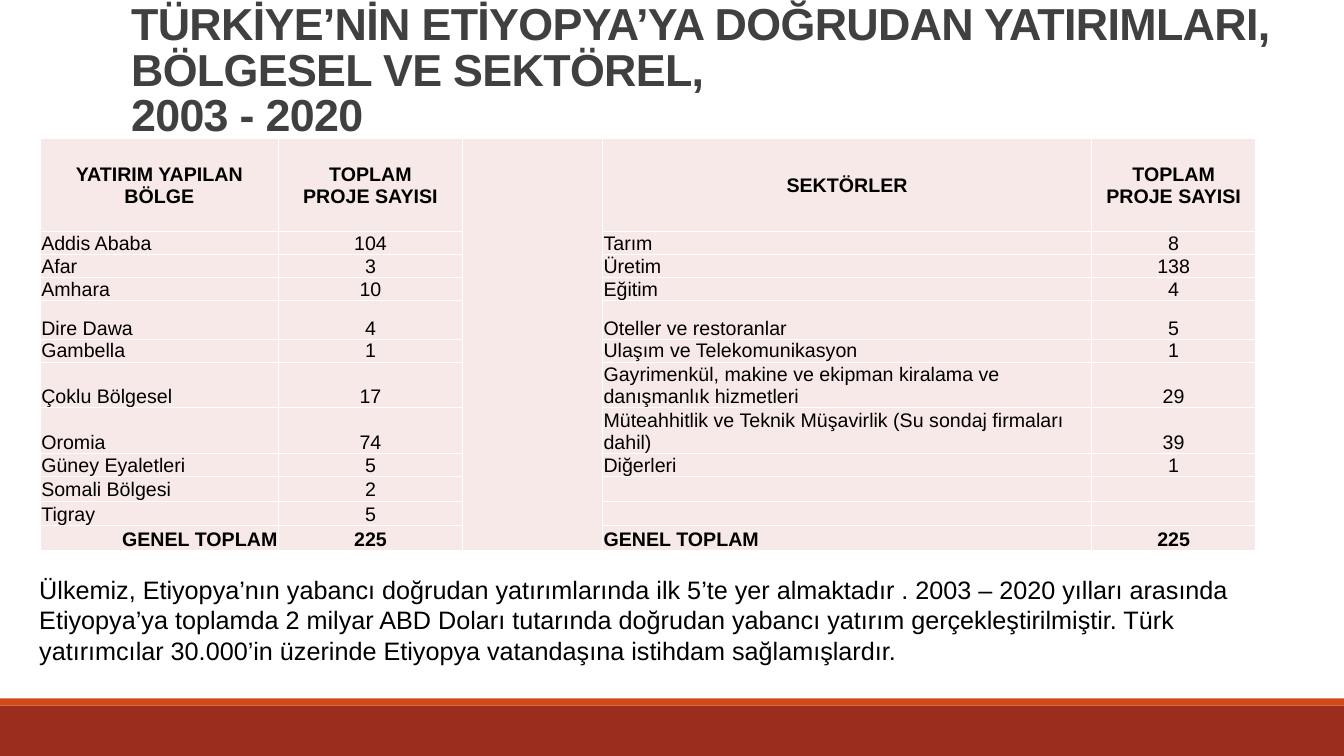
from lxml.etree import SubElement
from pptx import Presentation
from pptx.dml.color import RGBColor
from pptx.enum.shapes import MSO_SHAPE as SHAPE
from pptx.enum.text import MSO_ANCHOR as ANCHOR, MSO_AUTO_SIZE as AUTO, PP_ALIGN as ALIGN
from pptx.oxml.ns import qn
from pptx.util import Cm, Pt

COLORS = {"title": "404040", "text": "000000", "cell": "F7E9E8",
          "band": "9B2D1F", "stripe": "D34817"}
FONT = "Arial"
COLUMN_WEIGHTS = [2.36, 1.83, 1.39, 4.85, 1.63]
ROW_WEIGHTS = [41, 10, 10, 10, 17, 10, 20, 20, 10, 10, 10, 10]
GAP_COLUMN = 2
ROWS = [
    ("YATIRIM YAPILAN BÖLGE", "TOPLAM\nPROJE SAYISI", "", "SEKTÖRLER", "TOPLAM\nPROJE SAYISI"),
    ("Addis Ababa", "104", "", "Tarım", "8"),
    ("Afar", "3", "", "Üretim", "138"),
    ("Amhara", "10", "", "Eğitim", "4"),
    ("Dire Dawa", "4", "", "Oteller ve restoranlar", "5"),
    ("Gambella", "1", "", "Ulaşım ve Telekomunikasyon", "1"),
    ("Çoklu Bölgesel", "17", "",
     "Gayrimenkül, makine ve ekipman kiralama ve danışmanlık hizmetleri", "29"),
    ("Oromia", "74", "",
     "Müteahhitlik ve Teknik Müşavirlik (Su sondaj firmaları dahil)", "39"),
    ("Güney Eyaletleri", "5", "", "Diğerleri", "1"),
    ("Somali Bölgesi", "2", "", "", ""),
    ("Tigray", "5", "", "", ""),
    ("GENEL TOPLAM", "225", "", "GENEL TOPLAM", "225"),
]
LAST_ROW = len(ROWS) - 1


def rgb(name):
    return RGBColor.from_string(COLORS[name])


def add_run(p, text, size, color="text", bold=False):
    r = p.add_run()
    r.text = text
    r.font.name = FONT
    r.font.size = Pt(size)
    r.font.bold = bold
    r.font.color.rgb = rgb(color)
    return r


def add_footer(s, box):
    x, y, w, h = box
    stripe_h = 0.18
    bars = [("band", y + stripe_h, h - stripe_h), ("stripe", y, stripe_h)]
    for color, top, height in bars:
        bar = s.shapes.add_shape(SHAPE.RECTANGLE, Cm(x), Cm(top), Cm(w), Cm(height))
        bar.shadow.inherit = False
        bar.fill.solid()
        bar.fill.fore_color.rgb = rgb(color)
        bar.line.fill.background()


def add_title(s, box):
    title = s.shapes.title
    title.left, title.top, title.width, title.height = map(Cm, box)
    tf = title.text_frame
    tf.word_wrap = True
    tf.auto_size = AUTO.NONE
    tf.vertical_anchor = ANCHOR.BOTTOM
    p = tf.paragraphs[0]
    p.alignment = ALIGN.LEFT
    p.line_spacing = 0.85
    lines = ["TÜRKİYE’NİN ETİYOPYA’YA DOĞRUDAN YATIRIMLARI, BÖLGESEL VE SEKTÖREL,",
             "2003 - 2020"]
    for i, line in enumerate(lines):
        if i:
            p.add_line_break()
        r = add_run(p, line, 32, "title", True)
        r.font._element.set("spc", "-50")


def cell_alignment(row, col):
    if row == 0 or col in (1, 4):
        return ALIGN.CENTER
    if row == LAST_ROW and col == 0:
        return ALIGN.RIGHT
    return ALIGN.LEFT


def fill_cell(cell, text, row, col):
    cell.fill.solid()
    cell.fill.fore_color.rgb = rgb("cell")
    cell.margin_left = cell.margin_right = cell.margin_top = Cm(0.02)
    cell.margin_bottom = 0
    cell.vertical_anchor = ANCHOR.MIDDLE if row == 0 else ANCHOR.BOTTOM
    tf = cell.text_frame
    for i, line in enumerate(text.split("\n")):
        p = tf.add_paragraph() if i else tf.paragraphs[0]
        p.alignment = cell_alignment(row, col)
        if line:
            add_run(p, line, 14, bold=row in (0, LAST_ROW))
        else:
            SubElement(p._p, qn("a:endParaRPr"), sz="1400")


def add_investment_table(s, box):
    x, y, w, h = box
    frame = s.shapes.add_table(len(ROWS), len(COLUMN_WEIGHTS), Cm(x), Cm(y), Cm(w), Cm(h))
    table = frame.table
    table.first_row = False
    table.horz_banding = False
    for column, weight in zip(table.columns, COLUMN_WEIGHTS):
        column.width = Cm(w * weight / sum(COLUMN_WEIGHTS))
    for row, weight in zip(table.rows, ROW_WEIGHTS):
        row.height = Cm(h * weight / sum(ROW_WEIGHTS))
    for i, texts in enumerate(ROWS):
        for j, text in enumerate(texts):
            fill_cell(table.cell(i, j), text, i, j)
    table.cell(0, GAP_COLUMN).merge(table.cell(LAST_ROW, GAP_COLUMN))


def add_summary(s, box):
    tf = s.shapes.add_textbox(*map(Cm, box)).text_frame
    tf.word_wrap = True
    tf.auto_size = AUTO.SHAPE_TO_FIT_TEXT
    add_run(tf.paragraphs[0],
            "Ülkemiz, Etiyopya’nın yabancı doğrudan yatırımlarında ilk 5’te yer almaktadır . "
            "2003 – 2020 yılları arasında Etiyopya’ya toplamda 2 milyar ABD Doları tutarında "
            "doğrudan yabancı yatırım gerçekleştirilmiştir. Türk yatırımcılar 30.000’in "
            "üzerinde Etiyopya vatandaşına istihdam sağlamışlardır.", 18)


def main():
    prs = Presentation()
    prs.slide_width, prs.slide_height = Cm(33.87), Cm(19.05)
    s = prs.slides.add_slide(prs.slide_layouts[5])
    add_footer(s, (0, 17.6, 33.87, 1.45))
    add_title(s, (3.05, 1.47, 29.62, 2.21))
    add_investment_table(s, (1.02, 3.48, 30.63, 10.26))
    add_summary(s, (0.74, 14.35, 30.89, 2.57))
    prs.save("out.pptx")


if __name__ == "__main__":
    main()
